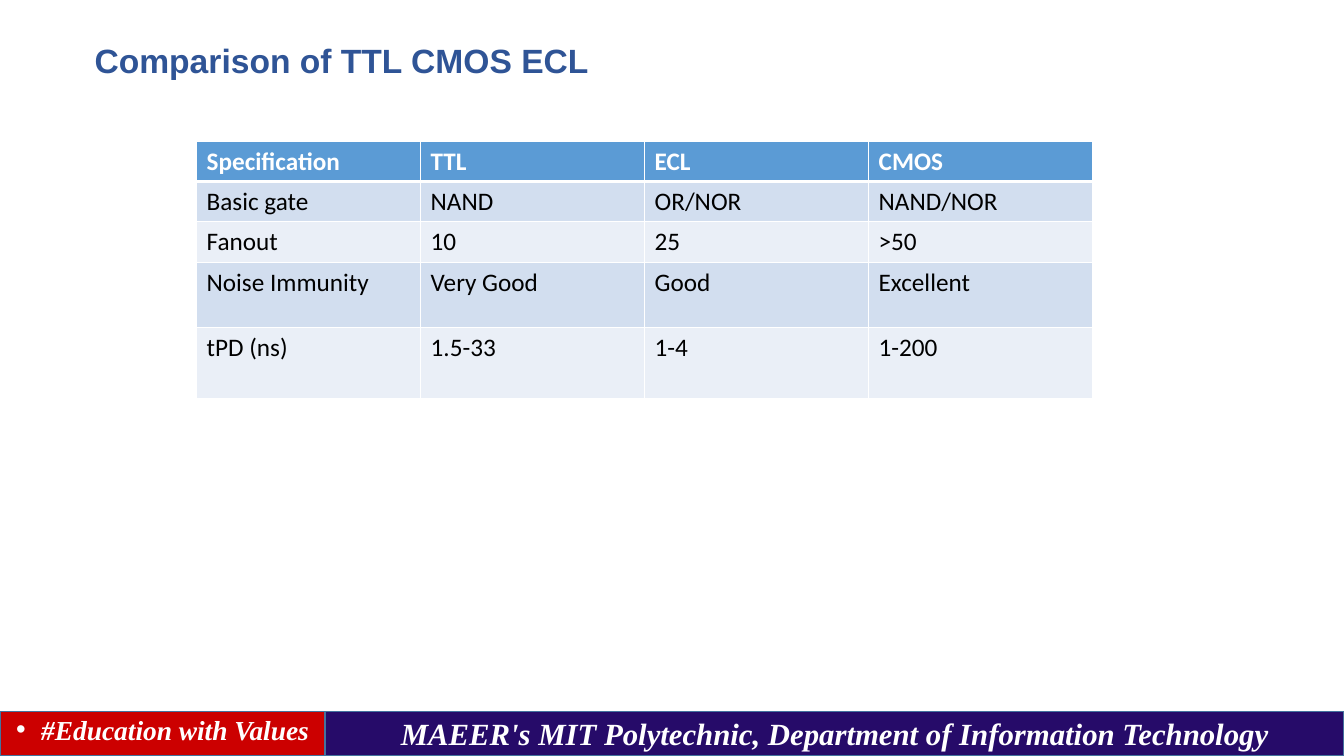
from dataclasses import dataclass

from lxml import etree
from pptx import Presentation
from pptx.dml.color import RGBColor
from pptx.enum.shapes import MSO_SHAPE
from pptx.enum.text import MSO_ANCHOR, PP_ALIGN
from pptx.oxml.ns import qn
from pptx.util import Inches, Pt

RECT = MSO_SHAPE.RECTANGLE
MIDDLE = MSO_ANCHOR.MIDDLE
CENTER, JUSTIFY = PP_ALIGN.CENTER, PP_ALIGN.JUSTIFY
WIDE, HIGH = Inches(13.33), Inches(7.5)
SPLIT, FOOT = 0.242, 0.941
ROWS = [
    ["Specification", "TTL", "ECL", "CMOS"],
    ["Basic gate", "NAND", "OR/NOR", "NAND/NOR"],
    ["Fanout", "10", "25", ">50"],
    ["Noise Immunity", "Very Good", "Good", "Excellent"],
    ["tPD (ns)", "1.5-33", "1-4", "1-200"],
]
TALLS = [0.4, 0.4, 0.4, 0.65, 0.7]


@dataclass(frozen=True)
class Theme:
    """Colours and type styles of the slide."""

    white: str = "FFFFFF"
    black: str = "000000"
    title: str = "2F5496"
    head: str = "5B9BD5"
    bands: tuple = ("EAEFF7", "D2DEEF")
    red: str = "CC0000"
    navy: str = "260B69"
    edge: str = "43739E"
    heading = {"name": "Arial", "size": Pt(24), "bold": True}
    cell = {"name": "Calibri", "size": Pt(18)}
    motto = {"name": "Times New Roman", "size": Pt(19.6), "bold": True, "italic": True}
    school = {**motto, "size": Pt(22)}


THEME = Theme()


def place(left, top, width, height):
    """Turn shares of the slide into lengths."""
    return int(left * WIDE), int(top * HIGH), int(width * WIDE), int(height * HIGH)


def style(item, values):
    """Set each named value on an item."""
    for name, value in values.items():
        setattr(item, name, value)


def write(frame, text, font, color, align=None):
    """Write one styled paragraph and return it."""
    para = frame.paragraphs[0]
    run = para.add_run()
    run.text = text
    style(run.font, font)
    run.font.color.rgb = RGBColor.from_string(color)
    para.alignment = align
    return para


def add_bar(slide, box, text, fill, font):
    """Add a filled footer bar and return its paragraph."""
    bar = slide.shapes.add_shape(RECT, *place(*box))
    bar.shadow.inherit = False
    bar.fill.solid()
    bar.fill.fore_color.rgb = RGBColor.from_string(fill)
    bar.line.color.rgb = RGBColor.from_string(THEME.edge)
    bar.line.width = Pt(1)
    style(bar.text_frame, {"word_wrap": True, "vertical_anchor": MIDDLE})
    return write(bar.text_frame, text, font, THEME.white, CENTER)


def add_dot(para):
    """Give a paragraph a hanging round bullet."""
    props = para._p.get_or_add_pPr()
    indent = Inches(0.25)
    props.set("marL", str(indent))
    props.set("indent", str(-indent))
    etree.SubElement(props, qn("a:buFont"), typeface="Arial")
    etree.SubElement(props, qn("a:buChar"), char="•")


def add_edges(cell, base):
    """Draw white cell borders with a given base width."""
    props = cell._tc.get_or_add_tcPr()
    widths = {"a:lnL": 1, "a:lnR": 1, "a:lnT": 1, "a:lnB": base}
    for spot, (tag, width) in enumerate(widths.items()):
        line = etree.Element(qn(tag), w=str(Pt(width)))
        fill = etree.SubElement(line, qn("a:solidFill"))
        etree.SubElement(fill, qn("a:srgbClr"), val=THEME.white)
        props.insert(spot, line)


def add_grid(slide):
    """Add the comparison table."""
    box = place(0.1463, 0.1867, 0.6667, sum(TALLS) / 7.5)
    grid = slide.shapes.add_table(len(ROWS), len(ROWS[0]), *box).table
    for row, (texts, tall) in enumerate(zip(ROWS, TALLS)):
        grid.rows[row].height = Inches(tall)
        head = row == 0
        fill = THEME.head if head else THEME.bands[row % 2]
        color = THEME.white if head else THEME.black
        for col, text in enumerate(texts):
            cell = grid.cell(row, col)
            cell.fill.solid()
            cell.fill.fore_color.rgb = RGBColor.from_string(fill)
            write(cell.text_frame, text, {**THEME.cell, "bold": head}, color)
            add_edges(cell, 3 if head else 1)


def add_title(slide):
    """Add the slide heading."""
    frame = slide.shapes.add_textbox(*place(0.063, 0.0467, 0.874, 0.108)).text_frame
    frame.word_wrap = True
    write(frame, "Comparison of TTL CMOS ECL", THEME.heading, THEME.title, JUSTIFY)


def main():
    """Build and save the slide."""
    deck = Presentation()
    style(deck, {"slide_width": WIDE, "slide_height": HIGH})
    slide = deck.slides.add_slide(deck.slide_layouts[6])
    motto = add_bar(slide, (0, FOOT, SPLIT, 1 - FOOT), "#Education with Values",
                    THEME.red, THEME.motto)
    motto.line_spacing = 0.7
    add_dot(motto)
    add_bar(slide, (SPLIT, FOOT, 1 - SPLIT, 1 - FOOT),
            "MAEER's MIT Polytechnic, Department of Information Technology",
            THEME.navy, THEME.school)
    add_title(slide)
    add_grid(slide)
    deck.save("out.pptx")


if __name__ == "__main__":
    main()
